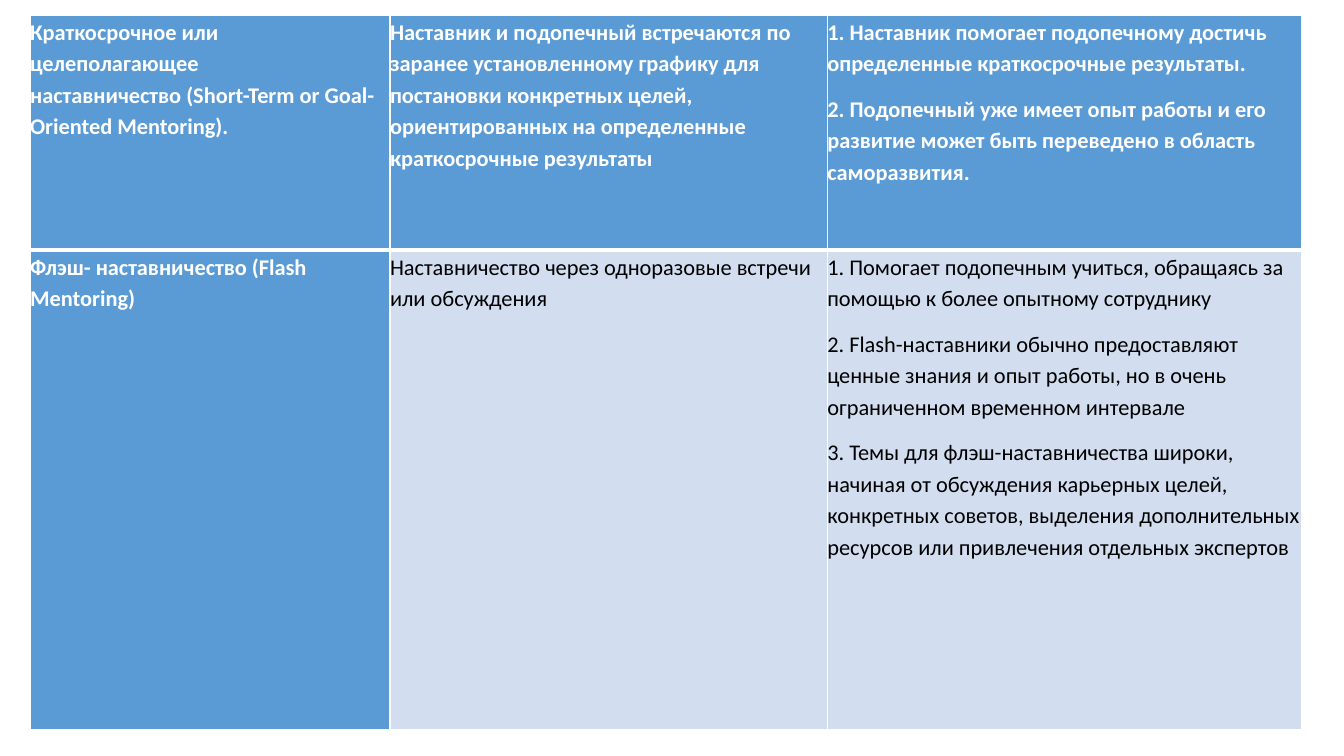
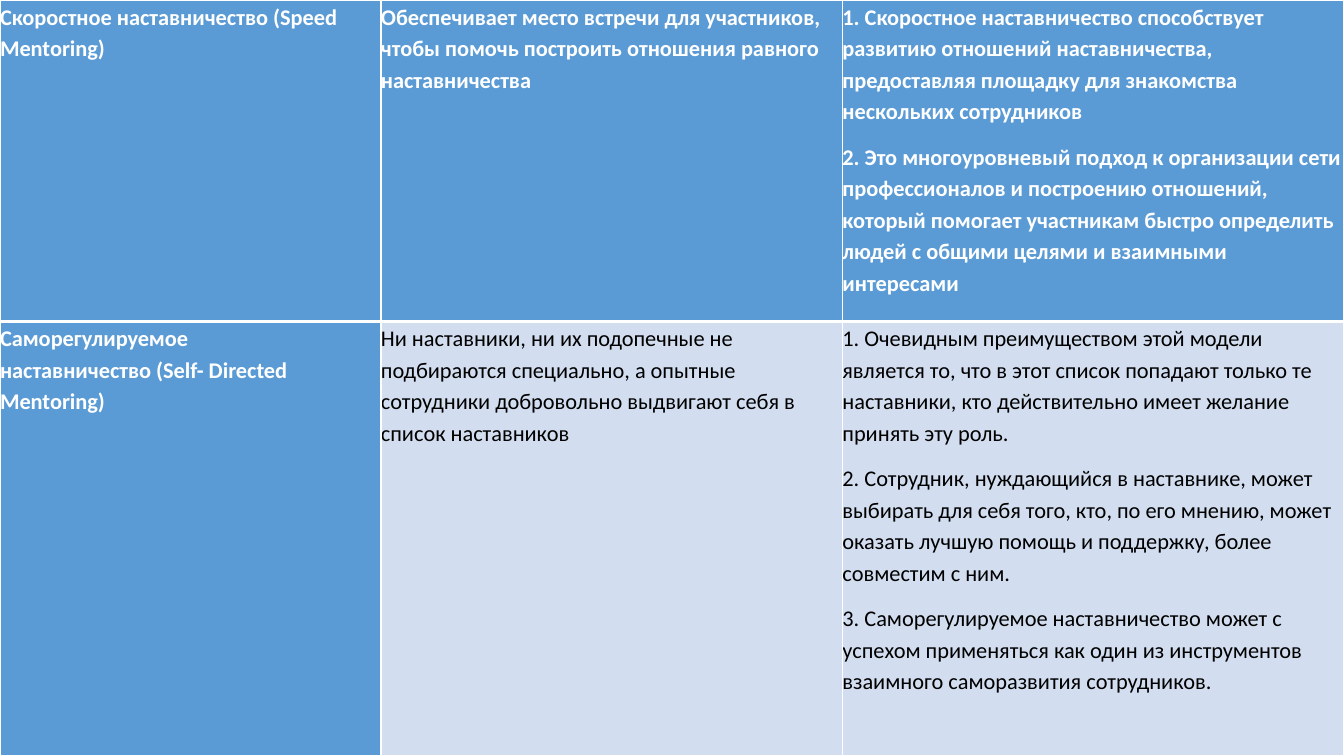
from lxml.etree import SubElement
from pptx import Presentation
from pptx.dml.color import RGBColor
from pptx.oxml.ns import qn
from pptx.util import Cm, Pt

NBSP = chr(160)

SHORT_TERM_AND_FLASH = [
    [
        [f"Краткосрочное или целеполагающее наставничество{NBSP}(Short-Term or Goal-Oriented Mentoring)."],
        ["Наставник и подопечный встречаются по заранее установленному графику для постановки "
         "конкретных целей, ориентированных на определенные краткосрочные результаты"],
        ["1. Наставник помогает подопечному достичь определенные краткосрочные результаты.",
         "2. Подопечный уже имеет опыт работы и его развитие может быть переведено в область "
         "саморазвития."],
    ],
    [
        [f"Флэш- наставничество{NBSP}(Flash Mentoring)"],
        ["Наставничество через одноразовые встречи или обсуждения"],
        ["1. Помогает подопечным учиться, обращаясь за помощью к более опытному сотруднику",
         "2. Flash-наставники обычно предоставляют ценные знания и опыт работы, но в очень "
         "ограниченном временном интервале",
         "3. Темы для флэш-наставничества широки, начиная от обсуждения карьерных целей, "
         "конкретных советов, выделения дополнительных ресурсов или привлечения отдельных "
         "экспертов"],
    ],
]

SPEED_AND_SELF_DIRECTED = [
    [
        [f"Скоростное наставничество{NBSP}(Speed Mentoring)"],
        ["Обеспечивает место встречи для участников, чтобы помочь построить отношения равного "
         "наставничества"],
        ["1. Скоростное наставничество способствует развитию отношений наставничества, "
         "предоставляя площадку для знакомства нескольких сотрудников",
         "2. Это многоуровневый подход к организации сети профессионалов и построению отношений, "
         "который помогает участникам быстро определить людей с общими целями и взаимными "
         "интересами"],
    ],
    [
        [f"Саморегулируемое наставничество{NBSP}(Self- Directed Mentoring)"],
        ["Ни наставники, ни их подопечные не подбираются специально, а опытные сотрудники "
         "добровольно выдвигают себя в список наставников"],
        ["1. Очевидным преимуществом этой модели является то, что в этот список попадают только "
         "те наставники, кто действительно имеет желание принять эту роль.",
         "2. Сотрудник, нуждающийся в наставнике, может выбирать для себя того, кто, по его "
         "мнению, может оказать лучшую помощь и поддержку, более совместим с ним.",
         "3. Саморегулируемое наставничество может с успехом применяться как один из "
         "инструментов взаимного саморазвития сотрудников."],
    ],
]


def rgb(value):
    return RGBColor.from_string(value)


def set_all(obj, values):
    for name, value in values.items():
        setattr(obj, name, value)


class Deck:
    BORDER = "FFFFFF"
    THIN, THICK = 1, 3
    HEADING = {"fill": "5B9BD5", "color": "FFFFFF", "bold": True}
    BODY = {"fill": "D2DEEF", "color": "000000", "bold": False}
    CELL = dict.fromkeys(("margin_left", "margin_right", "margin_top", "margin_bottom"), 0)
    PARAGRAPH = {"line_spacing": 1.15, "space_after": Pt(10)}
    FONT = {"name": "Calibri", "size": Pt(16)}

    def __init__(self):
        self.prs = Presentation()
        set_all(self.prs, {"slide_width": Cm(33.87), "slide_height": Cm(19.05)})

    def add_slide(self):
        self.s = self.prs.slides.add_slide(self.prs.slide_layouts[6])

    def table(self, left, top, widths, heights, rows):
        """Draw a table whose first row and first column are headings."""
        frame = self.s.shapes.add_table(len(heights), len(widths), Cm(left), Cm(top),
                                        Cm(sum(widths)), Cm(sum(heights)))
        table = frame.table
        set_all(table, {"first_row": False, "horz_banding": False})
        for column, width in zip(table.columns, widths):
            column.width = Cm(width)
        for i, (height, row) in enumerate(zip(heights, rows)):
            table.rows[i].height = Cm(height)
            for j, texts in enumerate(row):
                cell = table.cell(i, j)
                self.fill_cell(cell, texts, self.BODY if i and j else self.HEADING)
                self.borders(cell, top=self.THICK if i else self.THIN,
                             bottom=self.THIN if i else self.THICK)

    def fill_cell(self, cell, texts, look):
        set_all(cell, self.CELL)
        cell.fill.solid()
        cell.fill.fore_color.rgb = rgb(look["fill"])
        tf = cell.text_frame
        for k, text in enumerate(texts):
            p = tf.add_paragraph() if k else tf.paragraphs[0]
            set_all(p, self.PARAGRAPH)
            r = p.add_run()
            r.text = text
            set_all(r.font, self.FONT | {"bold": look["bold"]})
            r.font.color.rgb = rgb(look["color"])

    def borders(self, cell, top, bottom):
        tc_pr = cell._tc.get_or_add_tcPr()
        edges = {"a:lnL": self.THIN, "a:lnR": self.THIN, "a:lnT": top, "a:lnB": bottom}
        for position, (tag, width) in enumerate(edges.items()):
            line = SubElement(tc_pr, qn(tag), w=str(Pt(width)))
            SubElement(SubElement(line, qn("a:solidFill")), qn("a:srgbClr"), val=self.BORDER)
            tc_pr.insert(position, line)


def main():
    deck = Deck()
    deck.add_slide()
    deck.table(0.76, 0.38, [9.07, 11.02, 11.96], [5.92, 12.09], SHORT_TERM_AND_FLASH)
    deck.add_slide()
    deck.table(0, 0, [9.6, 11.63, 12.64], [8.1, 10.95], SPEED_AND_SELF_DIRECTED)
    deck.prs.save("out.pptx")


if __name__ == "__main__":
    main()
